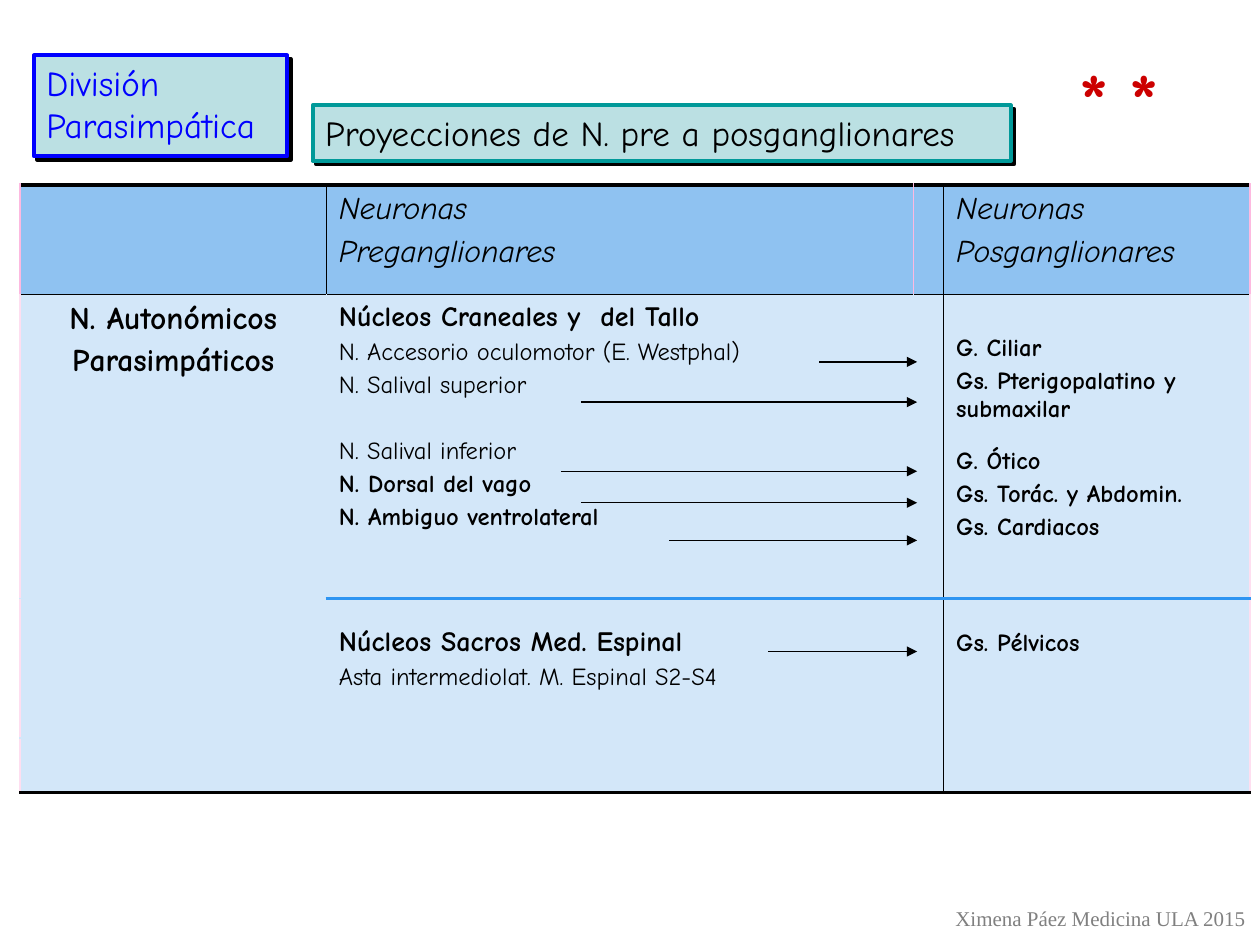
from lxml import etree
from pptx import Presentation
from pptx.dml.color import RGBColor
from pptx.enum import shapes, text
from pptx.oxml import ns
from pptx.util import Pt

COLORS = {
    "black": "000000", "blue": "0000FF", "teal": "009999", "box": "BBE0E3",
    "red": "CC0000", "gray": "808080", "header": "8FC2F1", "body": "D3E7F9",
    "pink": "FDB9E0", "pale_pink": "FEDEF0", "divider": "2E95F2",
}
FONT = "Comic Neue"

# Table content: (row, column) -> top inset, lines of (text, size, format)
BOLD, ITALIC, PLAIN = {"bold": True}, {"italic": True}, {}
CELLS = {
    (0, 1): (3.6, [("Neuronas", 18, ITALIC), ("Preganglionares", 18, ITALIC)]),
    (0, 3): (3.6, [("Neuronas", 18, ITALIC), ("Posganglionares", 18, ITALIC)]),
    (1, 0): (3.6, [("N. Autonómicos", 18, BOLD), ("Parasimpáticos", 18, BOLD)]),
    (1, 1): (3.6, [
        ("Núcleos Craneales y  del Tallo", 16, BOLD),
        ("N. Accesorio oculomotor (E. Westphal)", 14, PLAIN),
        ("N. Salival superior", 14, PLAIN),
        ("N. Salival inferior", 14, PLAIN),
        ("N. Dorsal del vago", 14, BOLD),
        ("N. Ambiguo ventrolateral", 14, BOLD)]),
    (1, 3): (22.5, [
        ("G. Ciliar", 14, BOLD),
        ("Gs. Pterigopalatino y submaxilar", 14, BOLD),
        ("G. Ótico", 14, BOLD),
        ("Gs. Torác. y Abdomin.", 14, BOLD),
        ("Gs. Cardiacos", 14, BOLD)]),
    (2, 1): (16, [
        ("Núcleos Sacros Med. Espinal", 16, BOLD),
        ("Asta intermediolat. M. Espinal S2-S4", 14, PLAIN)]),
    (2, 3): (17.9, [("Gs. Pélvicos", 14, BOLD)]),
}
GROUP_GAPS = {"N. Salival inferior": 21.7, "G. Ótico": 13.6}
COLUMNS = [175, 335.5, 16.5, 175]
ROWS = [62.6, 173.5, 80, 31]

# Border colours of the vertical lines, left to right
HEADER_EDGES = ["pink", "black", "pink", "black", "pink"]
BODY_EDGES = ["pale_pink", "body", "body", "black", "pale_pink"]

# Arrow starts and heights, relative to the table
ARROWS = [(456.5, 101), (320.5, 124), (309, 163.5),
          (320.5, 181.5), (371, 203), (427.5, 266.5)]
ARROW_END = 512.6


def rgb(name):
    return RGBColor.from_string(COLORS[name])


def add_node(parent, tag, **values):
    return etree.SubElement(parent, ns.qn(tag), values)


def add_shadow(effects):
    shadow = add_node(effects, "a:outerShdw", dist="35560", dir="2700000",
                      algn="ctr", rotWithShape="0")
    add_node(shadow, "a:srgbClr", val=COLORS["black"])


def write_lines(frame, lines, color="black", font=FONT, align="LEFT", spaced=False):
    for index, (words, size, style) in enumerate(lines):
        para = frame.paragraphs[0] if index == 0 else frame.add_paragraph()
        para.alignment = getattr(text.PP_ALIGN, align)
        if spaced and index:
            para.space_before = Pt(GROUP_GAPS.get(words, 0.2 * size))
        span = para.add_run()
        span.text = words
        formats = {"name": font, "size": Pt(size), "bold": False, "italic": False}
        for key, value in {**formats, **style}.items():
            setattr(span.font, key, value)
        span.font.color.rgb = rgb(color)


def set_frame(frame, wrap=True):
    formats = {"word_wrap": wrap, "auto_size": text.MSO_AUTO_SIZE.NONE,
               "vertical_anchor": text.MSO_ANCHOR.TOP,
               "margin_left": Pt(7.2), "margin_right": Pt(7.2),
               "margin_top": Pt(3.6), "margin_bottom": Pt(3.6)}
    for key, value in formats.items():
        setattr(frame, key, value)


def label_box(shape, box, lines, line_color, text_color):
    for key, value in zip(("left", "top", "width", "height"), box):
        setattr(shape, key, Pt(value))
    shape.fill.solid()
    shape.fill.fore_color.rgb = rgb("box")
    shape.line.color.rgb = rgb(line_color)
    shape.line.width = Pt(2.25)
    shape.shadow.inherit = False
    add_shadow(shape._element.spPr.find(ns.qn("a:effectLst")))
    set_frame(shape.text_frame)
    write_lines(shape.text_frame, [(line, 20, PLAIN) for line in lines], text_color)


def text_box(page, box, line, **formats):
    shape = page.shapes.add_textbox(*map(Pt, box))
    set_frame(shape.text_frame, wrap=False)
    write_lines(shape.text_frame, [line], **formats)
    return shape


def asterisks(page, box, step):
    left, top, width, height = box
    for index in range(2):
        shape = text_box(page, (left + index * step, top, width, height),
                         ("*", 44, BOLD), color="red")
        fill = shape._element.find(".//" + ns.qn("a:rPr")).find(ns.qn("a:solidFill"))
        effects = etree.Element(ns.qn("a:effectLst"))
        add_shadow(effects)
        fill.addnext(effects)


def row_edge(edge, column):
    """Colour and width of a horizontal line."""
    if edge in (0, len(ROWS)):
        return "black", 2.25
    if edge == 1:
        return "black", 1
    if edge == 2 and column:
        return "divider", 2.25
    return "body", 1


def set_borders(cell, row, column):
    edges = BODY_EDGES if row else HEADER_EDGES
    borders = {
        "a:lnL": (edges[column], 1),
        "a:lnR": (edges[column + 1], 1),
        "a:lnT": row_edge(row, column),
        "a:lnB": row_edge(row + cell.span_height, column),
    }
    for tag, (color, width) in borders.items():
        line = add_node(cell._tc.get_or_add_tcPr(), tag, w=str(Pt(width)))
        add_node(add_node(line, "a:solidFill"), "a:srgbClr", val=COLORS[color])


def neuron_table(page, box):
    table = page.shapes.add_table(len(ROWS), len(COLUMNS), *map(Pt, box)).table
    table.first_row = table.horz_banding = False
    for column, width in zip(table.columns, COLUMNS):
        column.width = Pt(width)
    for row, height in zip(table.rows, ROWS):
        row.height = Pt(height)
    for column in (2, 3):
        table.cell(2, column).merge(table.cell(3, column))
    for row in range(len(ROWS)):
        for column in range(len(COLUMNS)):
            cell = table.cell(row, column)
            set_borders(cell, row, column)
            cell.fill.solid()
            cell.fill.fore_color.rgb = rgb("body" if row else "header")
            if (row, column) in CELLS:
                inset, lines = CELLS[row, column]
                cell.margin_top = Pt(inset)
                write_lines(cell.text_frame, lines, spaced=True,
                            align="LEFT" if column else "CENTER")


def projection_arrows(page, box):
    left, top = box[:2]
    for start, height in ARROWS:
        arrow = page.shapes.add_connector(
            shapes.MSO_CONNECTOR.STRAIGHT, Pt(left + start), Pt(top + height),
            Pt(left + ARROW_END), Pt(top + height))
        arrow.line.color.rgb = rgb("black")
        arrow.line.width = Pt(0.75)
        properties = arrow._element.spPr
        add_node(properties.find(ns.qn("a:ln")), "a:tailEnd", type="triangle")
        add_node(properties, "a:effectLst")


def main():
    deck = Presentation()
    deck.slide_width, deck.slide_height = Pt(720), Pt(540)
    page = deck.slides.add_slide(deck.slide_layouts[5])

    # Table and its arrows
    table_box = (11.5, 105.8, sum(COLUMNS), sum(ROWS))
    neuron_table(page, table_box)
    projection_arrows(page, table_box)

    # Heading boxes
    division_box = (19.4, 31.7, 144.7, 57.6)
    division = page.shapes.add_shape(shapes.MSO_SHAPE.RECTANGLE, *map(Pt, division_box))
    label_box(division, division_box, ["División", "Parasimpática"], "blue", "blue")
    label_box(page.shapes.title, (178.6, 60.2, 399, 31.7),
              ["Proyecciones de N. pre a posganglionares"], "teal", "black")

    # Marks and credit
    asterisks(page, (609.8, 25.9, 37.4, 59.8), 28.4)
    text_box(page, (537.8, 514, 182.2, 21.6),
             ("Ximena Páez Medicina ULA 2015", 12, PLAIN),
             color="gray", font="Times New Roman", align="CENTER")
    deck.save("out.pptx")


if __name__ == "__main__":
    main()
